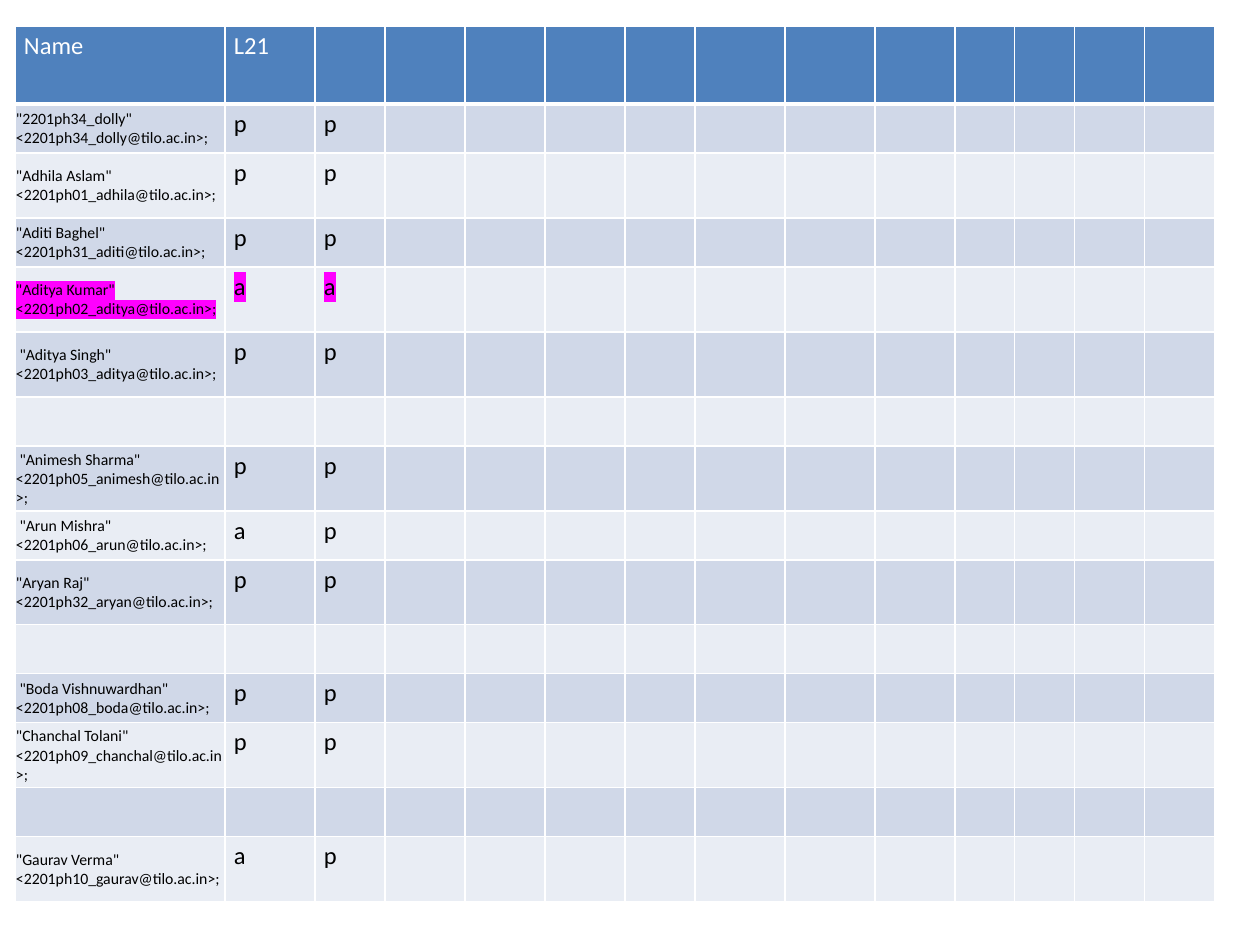
"""Build a one-slide attendance table with python-pptx."""
from lxml import etree
from pptx import Presentation
from pptx.dml.color import RGBColor
from pptx.enum.text import MSO_ANCHOR
from pptx.oxml.ns import qn
from pptx.util import Emu, Pt

TOP, MIDDLE = MSO_ANCHOR.TOP, MSO_ANCHOR.MIDDLE
PX = 914400 / 126
WHITE = RGBColor(0xFF, 0xFF, 0xFF)
BLACK = RGBColor(0x00, 0x00, 0x00)
BLUE = RGBColor(0x4F, 0x81, 0xBD)
BAND_DARK = RGBColor(0xD0, 0xD8, 0xE8)
BAND_LIGHT = RGBColor(0xE9, 0xED, 0xF4)
MAGENTA = RGBColor(0xFF, 0x00, 0xFF)

COL_WIDTHS = [210, 90, 70, 80, 80, 80, 70, 90, 90, 80, 60, 60, 70, 70]
HEADER, SHORT, TALL = 78, 49, 65
ROWS = [
    (HEADER, "Name", "L21", ""),
    (SHORT, '"2201ph34_dolly" <2201ph34_dolly@tilo.ac.in>;', "p", "p"),
    (TALL, '"Adhila Aslam" <2201ph01_adhila@tilo.ac.in>;', "p", "p"),
    (SHORT, '"Aditi Baghel" <2201ph31_aditi@tilo.ac.in>;', "p", "p"),
    (TALL, '"Aditya Kumar" <2201ph02_aditya@tilo.ac.in>;', "a", "a"),
    (TALL, ' "Aditya Singh" <2201ph03_aditya@tilo.ac.in>;', "p", "p"),
    (SHORT, "", "", ""),
    (TALL, ' "Animesh Sharma" <2201ph05_animesh@tilo.ac.in>;', "p", "p"),
    (SHORT, ' "Arun Mishra" <2201ph06_arun@tilo.ac.in>;', "a", "p"),
    (TALL, '"Aryan Raj" <2201ph32_aryan@tilo.ac.in>;', "p", "p"),
    (SHORT, "", "", ""),
    (SHORT, ' "Boda Vishnuwardhan" <2201ph08_boda@tilo.ac.in>;', "p", "p"),
    (TALL, '"Chanchal Tolani" <2201ph09_chanchal@tilo.ac.in>;', "p", "p"),
    (SHORT, "", "", ""),
    (TALL, '"Gaurav Verma" <2201ph10_gaurav@tilo.ac.in>;', "a", "p"),
]


def px(n):
    return Emu(round(n * PX))


def write(cell, text, size=14, color=BLACK, highlight=None, anchor=TOP, margins=(9, 5, 9, 5)):
    cell.vertical_anchor = anchor
    cell.margin_left, cell.margin_top, cell.margin_right, cell.margin_bottom = map(px, margins)
    if not text:
        return
    r = cell.text_frame.paragraphs[0].add_run()
    r.text = text
    r.font.name = "Calibri"
    r.font.size = Pt(size)
    r.font.color.rgb = color
    if highlight:
        mark = etree.Element(qn("a:highlight"))
        etree.SubElement(mark, qn("a:srgbClr"), val=str(highlight))
        r.font._element.find(qn("a:solidFill")).addnext(mark)


prs = Presentation()
prs.slide_width, prs.slide_height = px(1260), px(945)
s = prs.slides.add_slide(prs.slide_layouts[6])

heights = [row[0] for row in ROWS]
frame = s.shapes.add_table(len(ROWS), len(COL_WIDTHS), px(15), px(26),
                           px(sum(COL_WIDTHS)), px(sum(heights)))
table = frame.table
for column, width in zip(table.columns, COL_WIDTHS):
    column.width = px(width)

for i, (height, *texts) in enumerate(ROWS):
    table.rows[i].height = px(height)
    band = BLUE if i == 0 else BAND_DARK if i % 2 else BAND_LIGHT
    highlight = MAGENTA if "Aditya Kumar" in texts[0] else None
    for j, cell in enumerate(table.rows[i].cells):
        text = texts[j] if j < len(texts) else ""
        if i == 0:
            write(cell, text, color=WHITE)
        elif j == 0 and text:
            write(cell, text, size=9, highlight=highlight, anchor=MIDDLE, margins=(1, 1, 1, 0))
        else:
            write(cell, text, highlight=highlight)
        tcPr = cell._tc.get_or_add_tcPr()
        for side in "LRTB":
            weight = 3 if i == 0 and side == "B" else 1
            ln = etree.SubElement(tcPr, qn(f"a:ln{side}"), w=str(Pt(weight)))
            line_fill = etree.SubElement(ln, qn("a:solidFill"))
            etree.SubElement(line_fill, qn("a:srgbClr"), val=str(WHITE))
        cell.fill.solid()
        cell.fill.fore_color.rgb = band

prs.save("out.pptx")
